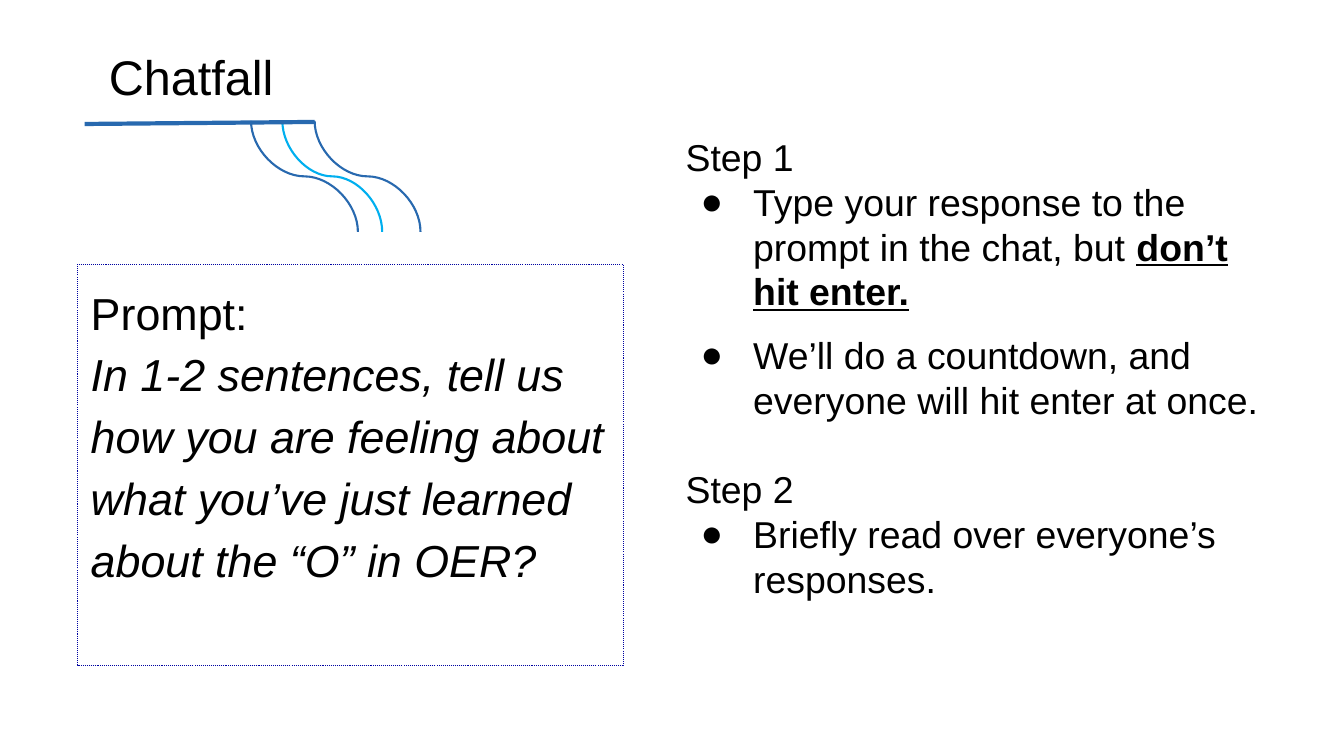
"""Build the Chatfall activity slide."""
import pptx
import pptx.util
import pptx.dml.color
import pptx.enum.dml
import pptx.enum.shapes
import pptx.enum.text
import pptx.oxml.ns
from lxml import etree

Inches, Pt = pptx.util.Inches, pptx.util.Pt
qn = pptx.oxml.ns.qn
KIND = pptx.enum.shapes.MSO_CONNECTOR

HEAD = [("Chatfall", {})]
PROMPT = [
    ("Prompt:", {}),
    ("In 1-2 sentences, tell us how you are feeling about what you’ve just "
     "learned about the “O” in OER?", {"italic": True}),
]
STEPS = [
    ("Step 1", {}),
    ("Type your response to the prompt in the chat, but ",
     {"bullet": True, "strong": "don’t hit enter."}),
    ("We’ll do a countdown, and everyone will hit enter at once.",
     {"bullet": True, "before": 13.3}),
    ("Step 2", {"before": 32}),
    ("Briefly read over everyone’s responses.", {"bullet": True}),
]
BLUE, CYAN = "2869AF", "00AFEF"
FALLS = [(2.8, 3.79, CYAN), (3.12, 4.17, BLUE), (2.49, 3.55, BLUE)]
TOP, DROP = 1.2, 1.1


def color(text):
    return pptx.dml.color.RGBColor.from_string(text)


def fill_text(box, place, lines, size, space=1.0, top=0.13):
    box.left, box.top, box.width, box.height = map(Inches, place)
    frame = box.text_frame
    frame.word_wrap = True
    frame.auto_size = pptx.enum.text.MSO_AUTO_SIZE.NONE
    frame.vertical_anchor = pptx.enum.text.MSO_ANCHOR.TOP
    frame.margin_left = frame.margin_right = frame.margin_bottom = Inches(0.13)
    frame.margin_top = Inches(top)
    for i, (text, look) in enumerate(lines):
        para = frame.add_paragraph() if i else frame.paragraphs[0]
        para.add_run().text = text
        para.alignment = pptx.enum.text.PP_ALIGN.LEFT
        para.line_spacing = space
        para.space_before, para.space_after = Pt(look.get("before", 0)), Pt(0)
        font = para.font
        font.name, font.size = "Arial", Pt(size)
        font.color.rgb = color("000000")
        font.italic = look.get("italic", False)
        if "strong" in look:
            run = para.add_run()
            run.text = look["strong"]
            run.font.bold = run.font.underline = True
        set_bullet(para, look.get("bullet", False))


def set_bullet(para, shown):
    props = para._p.get_or_add_pPr()
    props.set("marL", str(Inches(0.67 if shown else 0)))
    props.set("indent", str(Inches(-0.52 if shown else 0)))
    mark = etree.Element(qn("a:buChar" if shown else "a:buNone"))
    if shown:
        mark.set("char", "●")
    props.find(qn("a:defRPr")).addprevious(mark)


def add_line(slide, kind, ends, tint, width):
    line = slide.shapes.add_connector(kind, *map(Inches, ends))
    line.line.color.rgb, line.line.width = color(tint), Pt(width)
    etree.SubElement(line.element.spPr, qn("a:effectLst"))
    return line


def add_fall(slide, start, end, tint):
    mid_x, mid_y = (start + end) / 2, TOP + DROP / 2
    half_w, half_h = DROP / 2, (end - start) / 2
    ends = mid_x + half_w, mid_y - half_h, mid_x - half_w, mid_y + half_h
    fall = add_line(slide, KIND.CURVE, ends, tint, 1.5)
    fall.element.spPr.find(qn("a:xfrm")).set("rot", str(270 * 60000))


def main():
    deck = pptx.Presentation()
    deck.slide_width, deck.slide_height = Inches(13.33), Inches(7.5)
    slide = deck.slides.add_slide(deck.slide_layouts[3])
    prompt, head, steps = slide.placeholders
    fill_text(head, (0.95, 0.29, 3.38, 1), HEAD, 34.7, top=0.18)
    fill_text(steps, (6.67, 1.2, 6.09, 5.21), STEPS, 26.7)
    fill_text(prompt, (0.77, 2.62, 5.41, 3.98), PROMPT, 32, space=1.15)
    for box in (head, prompt):
        box.fill.solid()
        box.fill.fore_color.rgb = color("FFFFFF")
    prompt.line.color.rgb, prompt.line.width = color("0003A1"), Pt(0.75)
    prompt.line.dash_style = pptx.enum.dml.MSO_LINE.ROUND_DOT
    for fall in FALLS:
        add_fall(slide, *fall)
    add_line(slide, KIND.STRAIGHT, (0.84, 1.23, 3.12, 1.21), BLUE, 3)
    deck.save("out.pptx")


if __name__ == "__main__":
    main()
